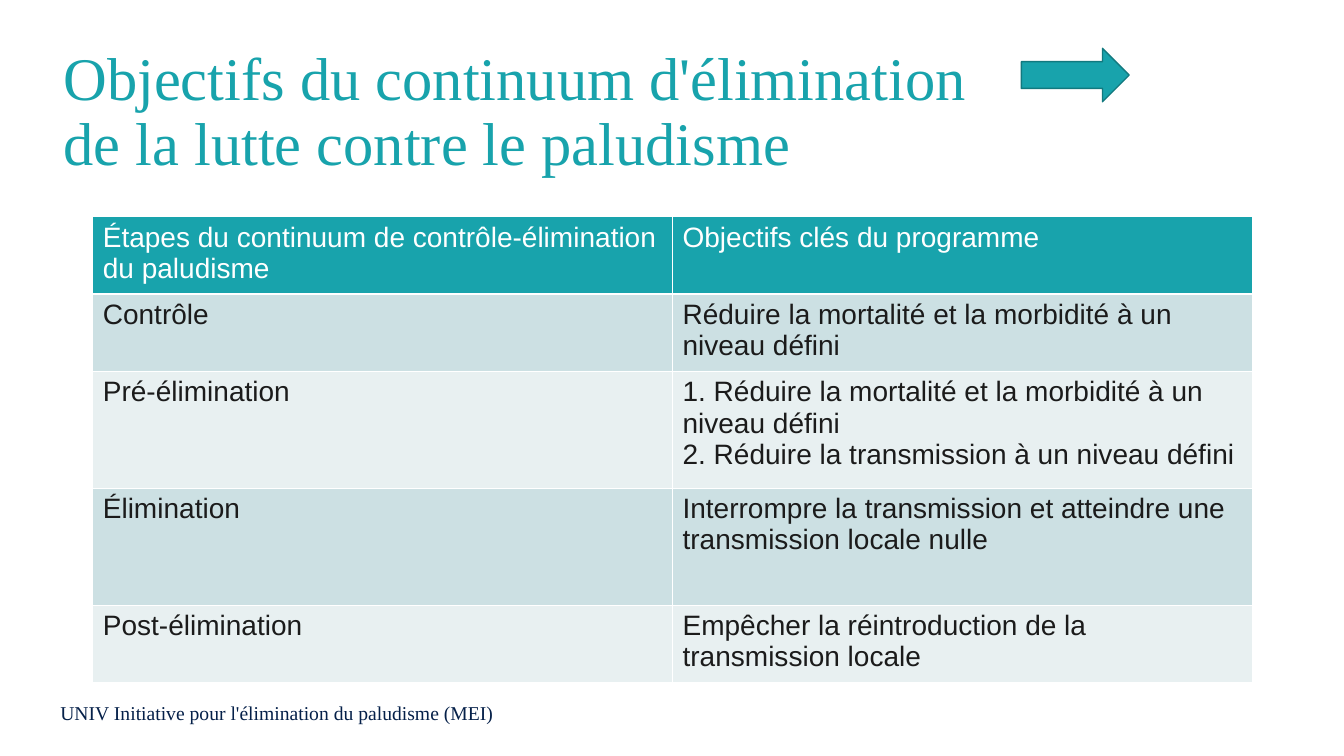
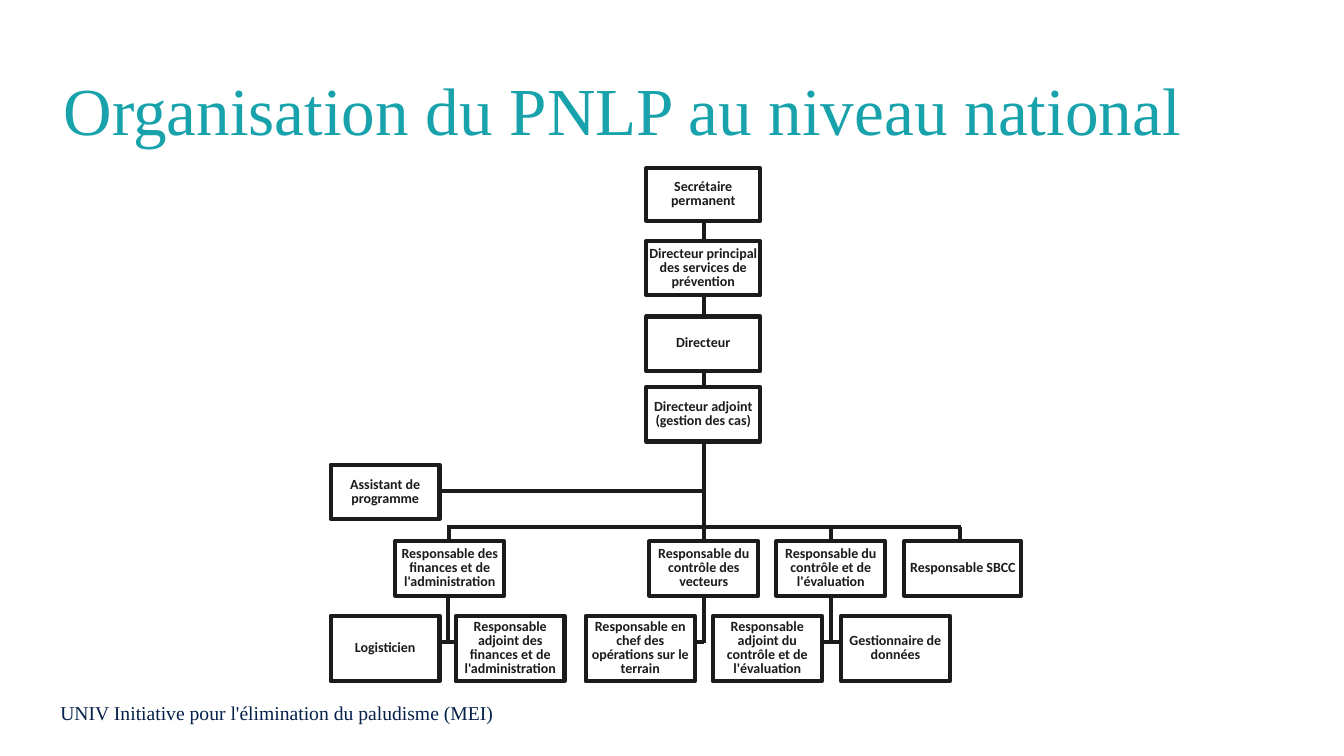
from lxml.etree import SubElement
from pptx import Presentation
from pptx.dml.color import RGBColor
from pptx.enum.shapes import MSO_CONNECTOR, MSO_SHAPE
from pptx.enum.text import MSO_ANCHOR, MSO_AUTO_SIZE, PP_ALIGN
from pptx.oxml import parse_xml
from pptx.oxml.ns import nsdecls, qn
from pptx.util import Inches, Pt

TEAL = RGBColor(0x18, 0xA3, 0xAC)
EDGE = RGBColor(0x12, 0x79, 0x7F)
NAVY = RGBColor(0x05, 0x20, 0x49)
INK = RGBColor(0x1B, 0x1B, 0x1B)
WHITE = RGBColor(0xFF, 0xFF, 0xFF)
BANDS = RGBColor(0xCC, 0xE0, 0xE3), RGBColor(0xE8, 0xF0, 0xF1)
SERIF = "Times New Roman"
FOOTER = "UNIV Initiative pour l'élimination du paludisme (MEI)"

GOALS = [
    ("Étapes du continuum de contrôle-élimination du paludisme", "Objectifs clés du programme"),
    ("Contrôle", "Réduire la mortalité et la morbidité à un niveau défini"),
    ("Pré-élimination", "1. Réduire la mortalité et la morbidité à un niveau défini\n"
                        "2. Réduire la transmission à un niveau défini"),
    ("Élimination", "Interrompre la transmission et atteindre une transmission locale nulle"),
    ("Post-élimination", "Empêcher la réintroduction de la transmission locale"),
]
HEIGHTS = [0.72, 0.72, 1.16, 1.16, 0.72]

CHIEFS = [
    (1.67, 0.52, "Secrétaire permanent"),
    (2.39, 0.54, "Directeur principal des services de prévention"),
    (3.14, 0.54, "Directeur"),
    (3.84, 0.54, "Directeur adjoint (gestion des cas)"),
]
HEADS = [
    (3.92, 1.08, "Responsable des finances et de l'administration"),
    (6.44, 1.08, "Responsable du contrôle des vecteurs"),
    (7.7, 1.08, "Responsable du contrôle et de l'évaluation"),
    (8.97, 1.16, "Responsable SBCC"),
]
STAFF = [
    (3.28, "Logisticien"),
    (4.52, "Responsable adjoint des finances et de l'administration"),
    (5.81, "Responsable en chef des opérations sur le terrain"),
    (7.07, "Responsable adjoint du contrôle et de l'évaluation"),
    (8.34, "Gestionnaire de données"),
]
TRUNK = 6.98
BUS = 5.23
DROPS = [4.45, 8.24, 9.52]
BRANCHES = [(4.44, 4.36, 4.52), (6.98, 6.88, 6.98), (8.24, 8.15, 8.34)]


class Deck:
    def __init__(self):
        self.file = Presentation()
        self.file.slide_width = Inches(13.33)
        self.file.slide_height = Inches(7.5)
        self.slide = None

    def style(self, frame, size, font, color, bold=False):
        for para in frame.paragraphs:
            for run in para.runs:
                run.font.size = Pt(size)
                run.font.name = font
                run.font.color.rgb = color
                run.font.bold = bold

    def page(self, text, size):
        self.slide = self.file.slides.add_slide(self.file.slide_layouts[5])
        title = self.slide.shapes.title
        title.left, title.top = Inches(0.53), Inches(0.4)
        title.width, title.height = Inches(12.45), Inches(1.45)
        frame = title.text_frame
        frame.text = text
        frame.auto_size = MSO_AUTO_SIZE.NONE
        frame.vertical_anchor = MSO_ANCHOR.MIDDLE
        para = frame.paragraphs[0]
        para.alignment = PP_ALIGN.LEFT
        para.line_spacing = 0.9
        self.style(frame, size, SERIF, TEAL)
        self.footer()

    def footer(self):
        note = self.slide.shapes.add_textbox(Inches(0.5), Inches(6.9), Inches(5.31), Inches(0.34))
        note.text_frame.word_wrap = True
        note.text_frame.text = FOOTER
        self.style(note.text_frame, 14, SERIF, NAVY)

    def shape(self, kind, left, top, width, height, fill, line, weight):
        form = self.slide.shapes.add_shape(
            kind, Inches(left), Inches(top), Inches(width), Inches(height))
        form.shadow.inherit = False
        form.fill.solid()
        form.fill.fore_color.rgb = fill
        form.line.color.rgb = line
        form.line.width = Pt(weight)
        return form

    def box(self, left, top, width, height, text):
        form = self.shape(MSO_SHAPE.RECTANGLE, left, top, width, height, WHITE, INK, 3)
        frame = form.text_frame
        frame.margin_left = frame.margin_right = frame.margin_top = frame.margin_bottom = 0
        frame.vertical_anchor = MSO_ANCHOR.MIDDLE
        frame.text = text
        frame.paragraphs[0].alignment = PP_ALIGN.CENTER
        frame.paragraphs[0].line_spacing = Pt(10)
        self.style(frame, 10, "Calibri", INK, True)

    def wire(self, left, top, right, end):
        link = self.slide.shapes.add_connector(
            MSO_CONNECTOR.STRAIGHT, Inches(left), Inches(top), Inches(right), Inches(end))
        link.line.color.rgb = INK
        link.line.width = Pt(3)
        SubElement(link._element.spPr, qn("a:effectLst"))

    def cell(self, cell, text, fill, color):
        cell.text_frame.text = text
        self.style(cell.text_frame, 20, "Arial", color)
        cell.fill.solid()
        cell.fill.fore_color.rgb = fill
        props = cell._tc.get_or_add_tcPr()
        for spot, side in enumerate("LRTB"):
            props.insert(spot, parse_xml(
                f'<a:ln{side} {nsdecls("a")} w="{Pt(1)}"><a:solidFill>'
                f'<a:srgbClr val="{WHITE}"/></a:solidFill></a:ln{side}>'))

    def table(self, left, top, width, rows, heights):
        count = len(rows[0])
        grid = self.slide.shapes.add_table(
            len(rows), count, Inches(left), Inches(top),
            Inches(width), Inches(sum(heights))).table
        for r, (row, height) in enumerate(zip(rows, heights)):
            grid.rows[r].height = Inches(height)
            fill, color = (BANDS[(r - 1) % 2], INK) if r else (TEAL, WHITE)
            for c, text in enumerate(row):
                self.cell(grid.cell(r, c), text, fill, color)


def goals(deck):
    deck.page("Objectifs du continuum d'élimination \vde la lutte contre le paludisme", 43.2)
    deck.shape(MSO_SHAPE.RIGHT_ARROW, 10.13, 0.48, 1.07, 0.53, TEAL, EDGE, 1)
    deck.table(0.92, 2.15, 11.5, GOALS, HEIGHTS)


def chart(deck):
    deck.page("Organisation du PNLP au niveau national", 48)
    for (top, height, _), (below, _, _) in zip(CHIEFS, CHIEFS[1:]):
        deck.wire(TRUNK, top + height, TRUNK, below)
    deck.wire(TRUNK, 4.38, TRUNK, 5.37)
    deck.wire(4.36, 4.87, TRUNK, 4.87)
    deck.wire(4.43, BUS, 9.53, BUS)
    for x in DROPS:
        deck.wire(x, BUS, x, 5.36)
    for x, left, right in BRANCHES:
        deck.wire(x, 5.9, x, 6.38)
        deck.wire(left, 6.37, right, 6.37)
    for top, height, text in CHIEFS:
        deck.box(6.41, top, 1.13, height, text)
    deck.box(3.28, 4.61, 1.08, 0.54, "Assistant de programme")
    for left, width, text in HEADS:
        deck.box(left, 5.37, width, 0.54, text)
    for left, text in STAFF:
        deck.box(left, 6.11, 1.08, 0.65, text)


def main():
    deck = Deck()
    goals(deck)
    chart(deck)
    deck.file.save("out.pptx")


if __name__ == "__main__":
    main()
